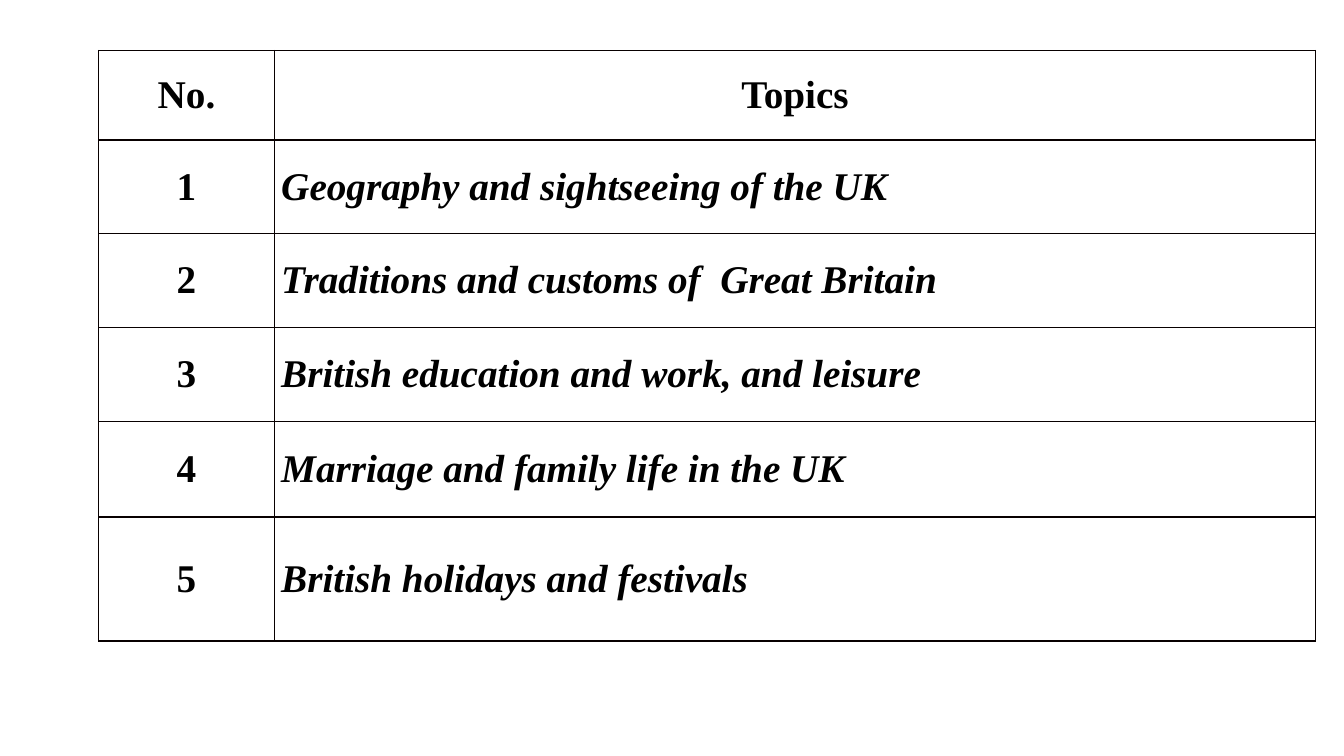
from dataclasses import dataclass

from lxml.etree import SubElement
from pptx import Presentation
from pptx.dml.color import RGBColor
from pptx.enum.text import MSO_ANCHOR as Anchor, PP_ALIGN as Align
from pptx.oxml.ns import qn
from pptx.table import _Cell as Cell
from pptx.util import Inches, Pt

FONT = "Times New Roman"
TEXT = "000000"
BORDER = "080000"
PAPER = "FFFFFF"
LEFT, TOP = 0.98, 0.5
COL_WIDTHS = [1.74, 10.33]


@dataclass
class Row:
    number: str
    topic: str
    height: float = 0.93


HEADER = Row("No.", "Topics", 0.89)
TOPICS = [
    Row("1", "Geography and sightseeing of the UK"),
    Row("2", "Traditions and customs of  Great Britain"),
    Row("3", "British education and work, and leisure"),
    Row("4", "Marriage and family life in the UK", 0.95),
    Row("5", "British holidays and festivals", 1.23),
]


def rgb(color: str) -> RGBColor:
    return RGBColor.from_string(color)


def add_borders(cell: Cell) -> None:
    tc_pr = cell._tc.get_or_add_tcPr()
    for side in ("lnL", "lnR", "lnT", "lnB"):
        ln = SubElement(tc_pr, qn(f"a:{side}"), w=str(Pt(1)))
        fill = SubElement(ln, qn("a:solidFill"))
        SubElement(fill, qn("a:srgbClr"), val=BORDER)


def fill_cell(cell: Cell, text: str, is_topic: bool) -> None:
    add_borders(cell)
    cell.fill.solid()
    cell.fill.fore_color.rgb = rgb(PAPER)
    cell.vertical_anchor = Anchor.MIDDLE
    cell.margin_left = cell.margin_right = Inches(0.07)
    cell.margin_top = cell.margin_bottom = 0
    p = cell.text_frame.paragraphs[0]
    p.text = text
    p.alignment = Align.LEFT if is_topic else Align.CENTER
    font = p.runs[0].font
    font.name, font.size = FONT, Pt(28)
    font.bold, font.italic = True, is_topic
    font.color.rgb = rgb(TEXT)


def main() -> None:
    prs = Presentation()
    prs.slide_width, prs.slide_height = Inches(13.33), Inches(7.5)
    s = prs.slides.add_slide(prs.slide_layouts[6])
    rows = [HEADER, *TOPICS]
    table = s.shapes.add_table(
        len(rows), len(COL_WIDTHS), Inches(LEFT), Inches(TOP),
        Inches(sum(COL_WIDTHS)), Inches(sum(row.height for row in rows)),
    ).table
    table.horz_banding = False
    for column, width in zip(table.columns, COL_WIDTHS):
        column.width = Inches(width)
    for i, row in enumerate(rows):
        table.rows[i].height = Inches(row.height)
        fill_cell(table.cell(i, 0), row.number, False)
        fill_cell(table.cell(i, 1), row.topic, row is not HEADER)
    prs.save("out.pptx")


if __name__ == "__main__":
    main()
